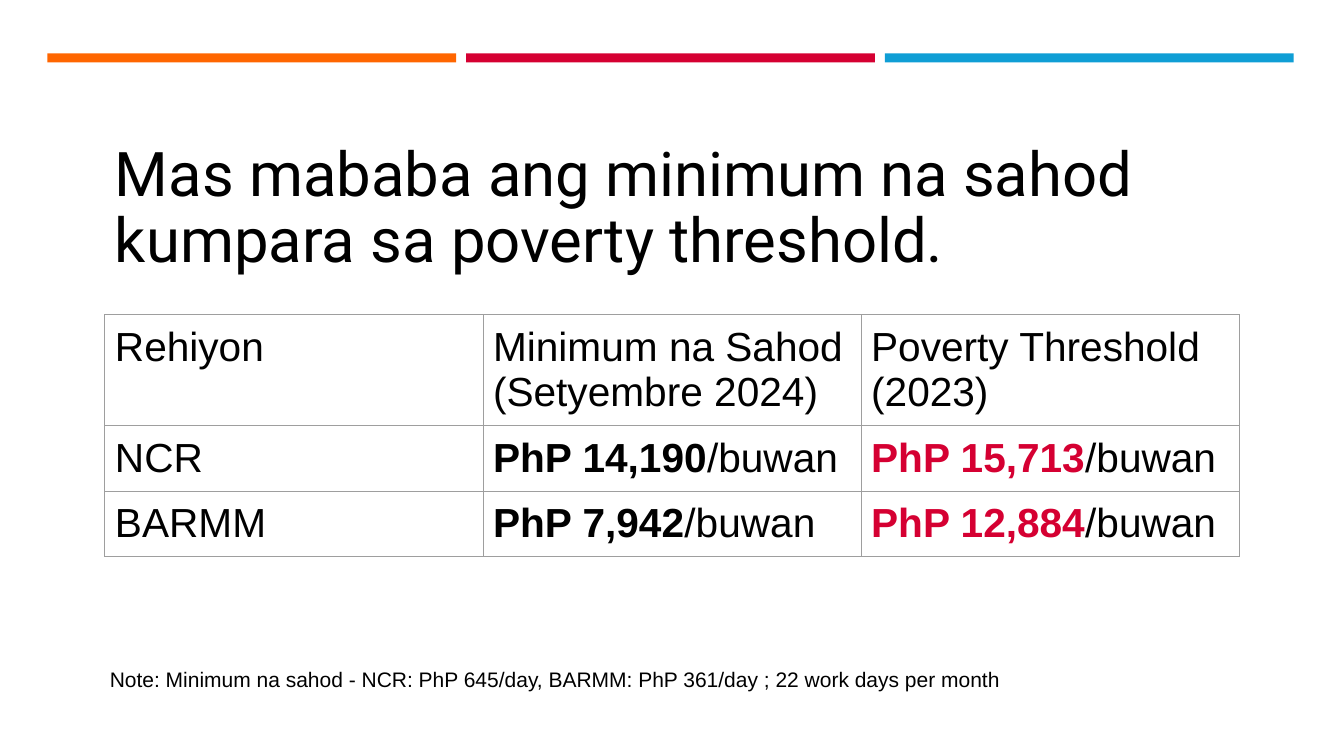
from lxml import etree
from pptx import Presentation
from pptx.dml.color import RGBColor
from pptx.enum import shapes, text
from pptx.oxml.ns import qn
from pptx.util import Inches, Pt

BLACK, RED, GREY = "000000", "D50032", "9E9E9E"
BAR_COLORS = ["FF6600", RED, "0F9ED5"]
HEADER = ["Rehiyon", "Minimum na Sahod (Setyembre 2024)", "Poverty Threshold (2023)"]
WAGES = [["NCR", "PhP 14,190", "PhP 15,713"],
         ["BARMM", "PhP 7,942", "PhP 12,884"]]


def rgb(value):
    return RGBColor.from_string(value)


def style(r, size, font="Arial", color=BLACK, bold=False):
    r.font.size, r.font.name, r.font.bold = Pt(size), font, bold
    r.font.color.rgb = rgb(color)


def set_margins(frame, x, y):
    frame.margin_left = frame.margin_right = Inches(x)
    frame.margin_top = frame.margin_bottom = Inches(y)


def add_bars(s, left, top, width, height, gap=0.1):
    bar_width = (width - gap * (len(BAR_COLORS) - 1)) / len(BAR_COLORS)
    for i, color in enumerate(BAR_COLORS):
        sp = s.shapes.add_shape(shapes.MSO_SHAPE.RECTANGLE,
                                Inches(left + i * (bar_width + gap)), Inches(top),
                                Inches(bar_width), Inches(height))
        sp.shadow.inherit = False
        sp.fill.solid()
        sp.fill.fore_color.rgb = rgb(color)
        sp.line.fill.background()


def add_title(s, left, top, width, height):
    sp = s.shapes.title
    sp.left, sp.top, sp.width, sp.height = map(Inches, (left, top, width, height))
    tf = sp.text_frame
    tf.text = "Mas mababa ang minimum na sahod kumpara sa poverty threshold."
    tf.word_wrap = True
    tf.auto_size = text.MSO_AUTO_SIZE.NONE
    tf.vertical_anchor = text.MSO_ANCHOR.BOTTOM
    set_margins(tf, 0.1, 0.05)
    p = tf.paragraphs[0]
    p.alignment = text.PP_ALIGN.LEFT
    p.line_spacing = 0.9
    style(p.runs[0], 44, "Roboto")


def add_borders(cell):
    tc_pr = cell._tc.get_or_add_tcPr()
    for side in ("lnL", "lnR", "lnT", "lnB"):
        ln = etree.SubElement(tc_pr, qn(f"a:{side}"), w=str(Pt(0.75)))
        fill = etree.SubElement(ln, qn("a:solidFill"))
        etree.SubElement(fill, qn("a:srgbClr"), val=GREY)


def add_wage_table(s, left, top, width, row_heights):
    rows = [HEADER] + WAGES
    table = s.shapes.add_table(len(rows), len(HEADER), Inches(left), Inches(top),
                               Inches(width), Inches(sum(row_heights))).table
    table.first_row = table.horz_banding = False
    for row, height in zip(table.rows, row_heights):
        row.height = Inches(height)
    for i, values in enumerate(rows):
        for j, value in enumerate(values):
            cell = table.cell(i, j)
            add_borders(cell)
            cell.fill.background()
            set_margins(cell, 0.1, 0.1)
            cell.text = value
            p = cell.text_frame.paragraphs[0]
            is_amount = i > 0 and j > 0
            style(p.runs[0], 29, color=RED if is_amount and j == 2 else BLACK,
                  bold=is_amount)
            if is_amount:
                r = p.add_run()
                r.text = "/buwan"
                style(r, 29)


def add_note(s, left, top, width, height):
    tf = s.shapes.add_textbox(*map(Inches, (left, top, width, height))).text_frame
    tf.text = ("Note: Minimum na sahod - NCR: PhP 645/day, BARMM: PhP 361/day ; "
               "22 work days per month")
    tf.word_wrap = True
    set_margins(tf, 0.1, 0.1)
    style(tf.paragraphs[0].runs[0], 15)


def main():
    prs = Presentation()
    prs.slide_width, prs.slide_height = Inches(13.33), Inches(7.5)
    s = prs.slides.add_slide(prs.slide_layouts[5])
    add_bars(s, 0.47, 0.53, 12.36, 0.09)
    add_title(s, 1.04, 1.65, 12.33, 1.14)
    add_wage_table(s, 1.04, 3.12, 11.25, [1.09, 0.65, 0.65])
    add_note(s, 0.99, 6.51, 11.38, 0.35)
    prs.save("out.pptx")


if __name__ == "__main__":
    main()
